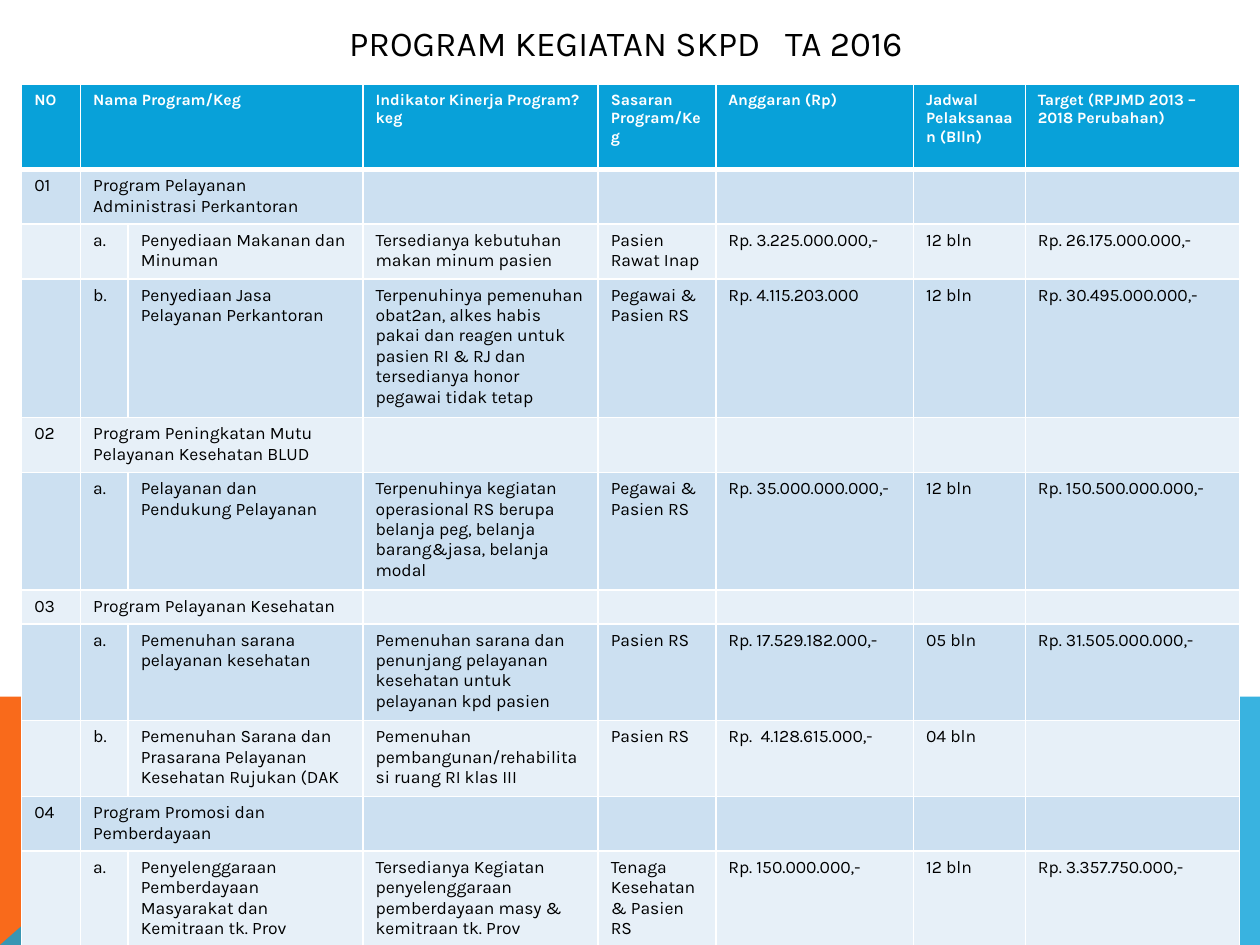
from lxml.etree import SubElement
from pptx import Presentation
from pptx.dml.color import RGBColor
from pptx.enum.text import MSO_ANCHOR, PP_ALIGN
from pptx.oxml import parse_xml
from pptx.oxml.ns import nsdecls, qn
from pptx.util import Pt

FONT = "Karla"
BLUE = RGBColor(0x08, 0xA1, 0xD9)
ORANGE = RGBColor(0xF9, 0x6A, 0x1B)
DARK_BAND = RGBColor(0xCC, 0xE0, 0xF1)
LIGHT_BAND = RGBColor(0xE7, 0xF0, 0xF8)
WHITE = RGBColor(0xFF, 0xFF, 0xFF)
BLACK = RGBColor(0, 0, 0)

TITLE = "PROGRAM KEGIATAN SKPD   TA 2016"
HEADER = ("NO", "Nama Program/Keg", "", "Indikator Kinerja Program?keg",
          "Sasaran Program/Keg", "Anggaran (Rp)", "Jadwal Pelaksanaan (Blln)",
          "Target (RPJMD 2013 – 2018 Perubahan)")
# Each program: number, name, activities
PROGRAMS = [
    ("01", "Program Pelayanan Administrasi Perkantoran", [
        ("a.", "Penyediaan Makanan dan Minuman",
         "Tersedianya kebutuhan makan minum pasien",
         "Pasien Rawat Inap", "Rp. 3.225.000.000,-", "12 bln", "Rp. 26.175.000.000,-"),
        ("b.", "Penyediaan Jasa Pelayanan Perkantoran",
         "Terpenuhinya pemenuhan obat2an, alkes habis pakai dan reagen untuk "
         "pasien RI & RJ dan tersedianya honor pegawai tidak tetap",
         "Pegawai & Pasien RS", "Rp. 4.115.203.000", "12 bln", "Rp. 30.495.000.000,-"),
    ]),
    ("02", "Program Peningkatan Mutu Pelayanan Kesehatan BLUD", [
        ("a.", "Pelayanan dan  Pendukung Pelayanan",
         "Terpenuhinya kegiatan operasional RS berupa belanja peg, belanja "
         "barang&jasa, belanja modal",
         "Pegawai & Pasien RS", "Rp. 35.000.000.000,-", "12 bln", "Rp. 150.500.000.000,-"),
    ]),
    ("03", "Program Pelayanan Kesehatan", [
        ("a.", "Pemenuhan sarana pelayanan kesehatan",
         "Pemenuhan sarana dan penunjang pelayanan kesehatan untuk pelayanan kpd pasien",
         "Pasien RS", "Rp. 17.529.182.000,-", "05 bln", "Rp. 31.505.000.000,-"),
        ("b.", "Pemenuhan Sarana dan Prasarana Pelayanan Kesehatan Rujukan (DAK",
         "Pemenuhan pembangunan/rehabilitasi ruang RI klas III",
         "Pasien RS", "Rp.  4.128.615.000,-", "04 bln", ""),
    ]),
    ("04", "Program Promosi dan Pemberdayaan", [
        ("a.", "Penyelenggaraan Pemberdayaan Masyarakat dan Kemitraan tk. Prov",
         "Tersedianya Kegiatan penyelenggaraan pemberdayaan masy & kemitraan tk. Prov",
         "Tenaga Kesehatan & Pasien RS", "Rp. 150.000.000,-", "12 bln",
         "Rp. 3.357.750.000,-"),
    ]),
]
COLUMN_WIDTHS = (33.7, 27.2, 134.2, 134.4, 67.2, 113, 63.9, 122.4)
ROW_HEIGHTS = (48.4, 30.6, 30.6, 77, 30.6, 65.4, 18.9, 53.9, 42, 30.6, 53.7)

SLIDE_W, SLIDE_H = 720, 540
BAND_TOP, FOLD_X = 397.6, 160.8
ORANGE_BAND = [(0, SLIDE_H), (0, BAND_TOP), (FOLD_X, BAND_TOP), (281.5, SLIDE_H)]
BLUE_BAND = [(0, SLIDE_H), (FOLD_X, BAND_TOP), (SLIDE_W, BAND_TOP), (SLIDE_W, SLIDE_H)]


def add_band(slide, corners, color):
    outline = slide.shapes.build_freeform(*corners[0], scale=Pt(1))
    outline.add_line_segments(corners[1:], close=True)
    band = outline.convert_to_shape()
    band.shadow.inherit = False
    band.fill.solid()
    band.fill.fore_color.rgb = color
    band.line.fill.background()
    return band


def set_alpha(shape, percent):
    color = shape._element.spPr.find(qn("a:solidFill"))[0]
    SubElement(color, qn("a:alpha"), val=str(percent * 1000))


def style_text(paragraph, size, color, bold=False):
    font = paragraph.font
    font.name, font.size, font.bold = FONT, Pt(size), bold
    font.color.rgb = color


def set_borders(cell, bottom_width):
    widths = {"lnL": 1, "lnR": 1, "lnT": 1, "lnB": bottom_width}
    for position, (side, width) in enumerate(widths.items()):
        cell._tc.get_or_add_tcPr().insert(position, parse_xml(
            f'<a:{side} {nsdecls("a")} w="{Pt(width)}"><a:solidFill>'
            f'<a:srgbClr val="{WHITE}"/></a:solidFill></a:{side}>'))


def fill_cell(cell, text, fill, size, color, bold, bottom_width):
    cell.text = text
    paragraph = cell.text_frame.paragraphs[0]
    style_text(paragraph, size, color, bold)
    if not text:  # an empty cell takes its line height from the end mark
        SubElement(paragraph._p, qn("a:endParaRPr"), sz=str(size * 100))
    cell.fill.solid()
    cell.fill.fore_color.rgb = fill
    set_borders(cell, bottom_width)


def main():
    prs = Presentation()
    prs.slide_width, prs.slide_height = Pt(SLIDE_W), Pt(SLIDE_H)
    slide = prs.slides.add_slide(prs.slide_layouts[6])

    add_band(slide, ORANGE_BAND, ORANGE)
    set_alpha(add_band(slide, BLUE_BAND, BLUE), 80)

    title = slide.shapes.add_textbox(Pt(59.8), Pt(12.2), Pt(696 - 59.8), Pt(23.8))
    title.width = Pt(592 + 4)
    frame = title.text_frame
    frame.word_wrap = True
    frame.vertical_anchor = MSO_ANCHOR.MIDDLE
    frame.text = TITLE
    frame.paragraphs[0].alignment = PP_ALIGN.CENTER
    style_text(frame.paragraphs[0], 20, BLACK)

    rows = [HEADER]
    for number, name, activities in PROGRAMS:
        rows.append((number, name) + ("",) * 6)
        rows += [("",) + activity for activity in activities]

    table = slide.shapes.add_table(
        len(rows), len(HEADER), Pt(12.4), Pt(48.4),
        Pt(sum(COLUMN_WIDTHS)), Pt(sum(ROW_HEIGHTS))).table
    for column, width in zip(table.columns, COLUMN_WIDTHS):
        column.width = Pt(width)
    for row, height in zip(table.rows, ROW_HEIGHTS):
        row.height = Pt(height)

    for r, texts in enumerate(rows):
        if r == 0:
            style = (BLUE, 9, WHITE, True, 3)
        else:
            style = (DARK_BAND if r % 2 else LIGHT_BAND, 10, BLACK, False, 1)
        for c, text in enumerate(texts):
            fill_cell(table.cell(r, c), text, *style)
        if texts[0]:  # the header and program names span letter and name columns
            table.cell(r, 1).merge(table.cell(r, 2))

    prs.save("out.pptx")


if __name__ == "__main__":
    main()
